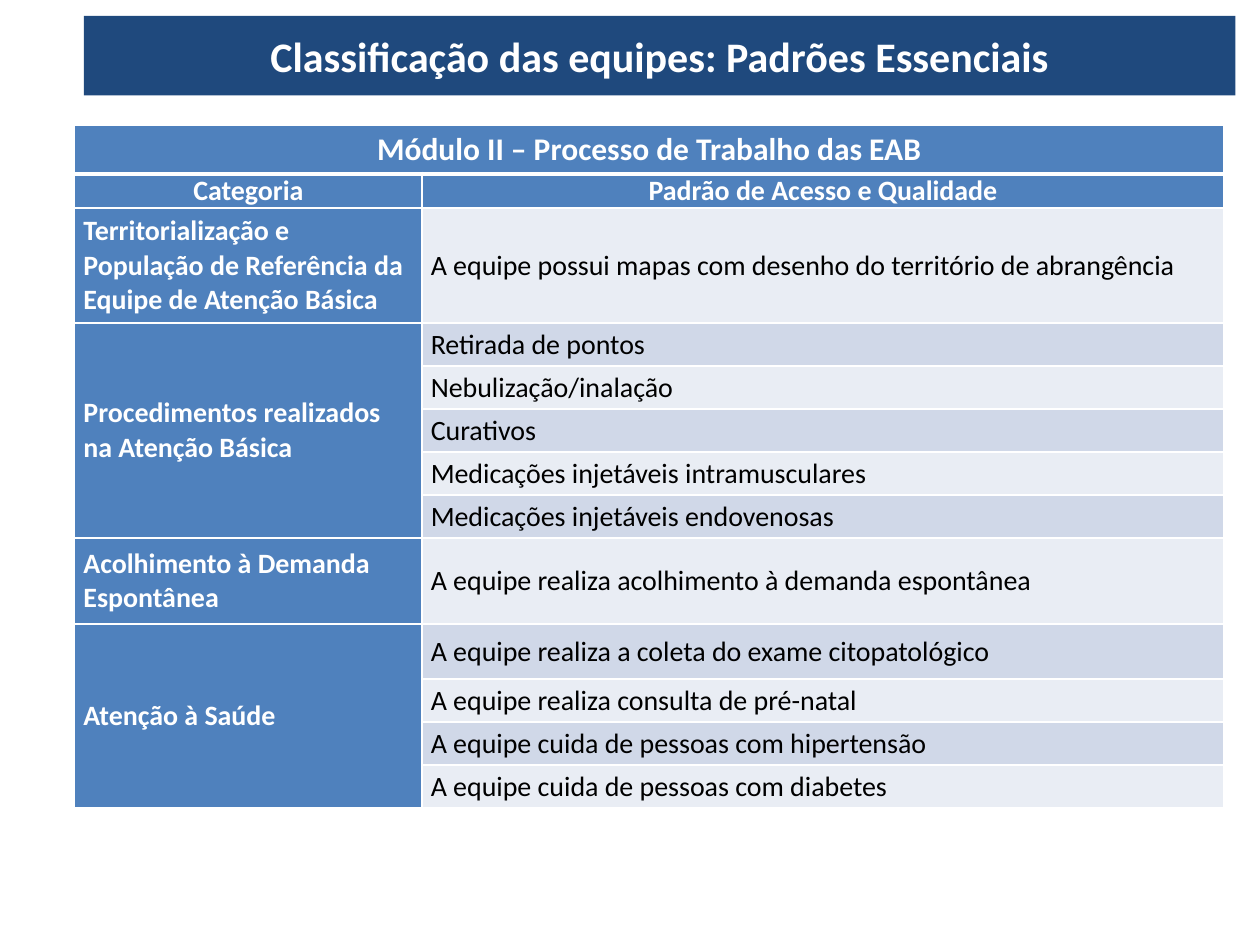
from dataclasses import dataclass

from lxml import etree
from pptx import Presentation
from pptx.dml.color import RGBColor
from pptx.enum.shapes import MSO_SHAPE
from pptx.enum.text import MSO_ANCHOR, PP_ALIGN
from pptx.oxml.ns import qn
from pptx.util import Pt

RECTANGLE = MSO_SHAPE.RECTANGLE
MIDDLE = MSO_ANCHOR.MIDDLE
CENTER = PP_ALIGN.CENTER
LEFT = PP_ALIGN.LEFT

COLORS = {
    "title": "1F497D",
    "header": "4F81BD",
    "light": "E9EDF4",
    "dark": "D0D8E8",
    "white": "FFFFFF",
    "black": "000000",
}
FONT = "Calibri"
COLUMN_WIDTHS = (198.5, 458.3)
HEADER_HEIGHTS = (27.8, 19.2)
STANDARD_HEIGHT = 24.6


@dataclass(frozen=True)
class Standard:
    text: str
    height: float = STANDARD_HEIGHT


@dataclass(frozen=True)
class Category:
    name: str
    standards: tuple[Standard, ...]


@dataclass(frozen=True)
class CellStyle:
    fill: str
    color: str = "white"
    size: int = 16
    bold: bool = True
    align: PP_ALIGN = LEFT
    top: int = 1
    bottom: int = 1


CATEGORIES = (
    Category("Territorialização e População de Referência da Equipe de Atenção Básica", (
        Standard("A equipe possui mapas com desenho do território de abrangência", 65.6),
    )),
    Category("Procedimentos realizados na Atenção Básica", (
        Standard("Retirada de pontos"),
        Standard("Nebulização/inalação"),
        Standard("Curativos"),
        Standard("Medicações injetáveis intramusculares"),
        Standard("Medicações injetáveis endovenosas"),
    )),
    Category("Acolhimento à Demanda Espontânea", (
        Standard("A equipe realiza acolhimento à demanda espontânea", 49.2),
    )),
    Category("Atenção à Saúde", (
        Standard("A equipe realiza a coleta do exame citopatológico", 31.5),
        Standard("A equipe realiza consulta de pré-natal"),
        Standard("A equipe cuida de pessoas com hipertensão"),
        Standard("A equipe cuida de pessoas com diabetes"),
    )),
)
MODULE_STYLE = CellStyle("header", size=18, align=CENTER, bottom=3)
HEADING_STYLE = CellStyle("header", align=CENTER, top=3)
CATEGORY_STYLE = CellStyle("header")
STANDARD_STYLES = tuple(
    CellStyle(fill, color="black", bold=False) for fill in ("light", "dark")
)


def rgb(name: str) -> RGBColor:
    return RGBColor.from_string(COLORS[name])


def write_text(frame, text: str, size: int, color: str, bold: bool, align: PP_ALIGN) -> None:
    frame.text = text
    paragraph = frame.paragraphs[0]
    paragraph.alignment = align
    for run in paragraph.runs:
        run.font.name = FONT
        run.font.size = Pt(size)
        run.font.bold = bold
        run.font.color.rgb = rgb(color)


def set_borders(cell, style: CellStyle) -> None:
    properties = cell._tc.get_or_add_tcPr()
    widths = {"lnL": 1, "lnR": 1, "lnT": style.top, "lnB": style.bottom}
    for position, (side, width) in enumerate(widths.items()):
        border = etree.Element(qn(f"a:{side}"), w=str(Pt(width)))
        fill = etree.SubElement(border, qn("a:solidFill"))
        etree.SubElement(fill, qn("a:srgbClr"), val=COLORS["white"])
        properties.insert(position, border)


def format_cell(cell, text: str, style: CellStyle) -> None:
    cell.margin_left = cell.margin_right = Pt(5)
    cell.margin_top = cell.margin_bottom = Pt(0)
    cell.vertical_anchor = MIDDLE
    cell.fill.solid()
    cell.fill.fore_color.rgb = rgb(style.fill)
    set_borders(cell, style)
    write_text(cell.text_frame, text, style.size, style.color, style.bold, style.align)


def add_title(slide) -> None:
    title = slide.shapes.add_shape(RECTANGLE, Pt(48), Pt(9), Pt(658), Pt(45.5))
    title.shadow.inherit = False
    title.fill.solid()
    title.fill.fore_color.rgb = rgb("title")
    title.line.fill.background()
    title.text_frame.word_wrap = True
    title.text_frame.vertical_anchor = MIDDLE
    write_text(title.text_frame, "Classificação das equipes: Padrões Essenciais",
               24, "white", True, CENTER)


def add_standards_table(slide) -> None:
    standards = [standard for category in CATEGORIES for standard in category.standards]
    heights = [*HEADER_HEIGHTS, *(standard.height for standard in standards)]
    table = slide.shapes.add_table(
        len(heights), len(COLUMN_WIDTHS), Pt(42.7), Pt(71.6),
        Pt(sum(COLUMN_WIDTHS)), Pt(sum(heights)),
    ).table
    for column, width in zip(table.columns, COLUMN_WIDTHS):
        column.width = Pt(width)
    for row, height in zip(table.rows, heights):
        row.height = Pt(height)

    format_cell(table.cell(0, 0), "Módulo II – Processo de Trabalho das EAB", MODULE_STYLE)
    format_cell(table.cell(0, 1), "", MODULE_STYLE)
    table.cell(0, 0).merge(table.cell(0, 1))
    for column, heading in enumerate(("Categoria", "Padrão de Acesso e Qualidade")):
        format_cell(table.cell(1, column), heading, HEADING_STYLE)

    first = len(HEADER_HEIGHTS)
    for category in CATEGORIES:
        for row, standard in enumerate(category.standards, first):
            name = category.name if row == first else ""
            format_cell(table.cell(row, 0), name, CATEGORY_STYLE)
            format_cell(table.cell(row, 1), standard.text, STANDARD_STYLES[row % 2])
        last = first + len(category.standards) - 1
        if last > first:
            table.cell(first, 0).merge(table.cell(last, 0))
        first = last + 1


def main() -> None:
    presentation = Presentation()
    presentation.slide_width = Pt(720)
    presentation.slide_height = Pt(540)
    slide = presentation.slides.add_slide(presentation.slide_layouts[6])
    add_standards_table(slide)
    add_title(slide)
    presentation.save("out.pptx")


if __name__ == "__main__":
    main()
